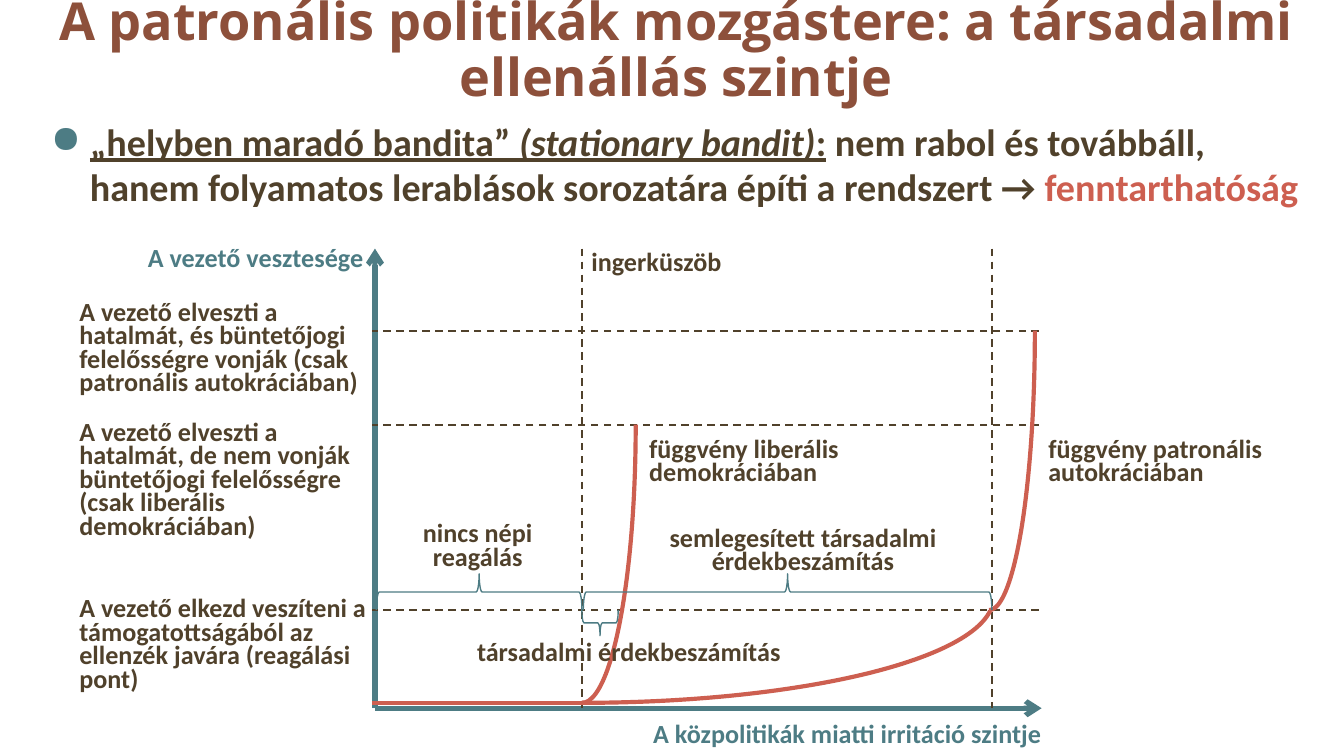
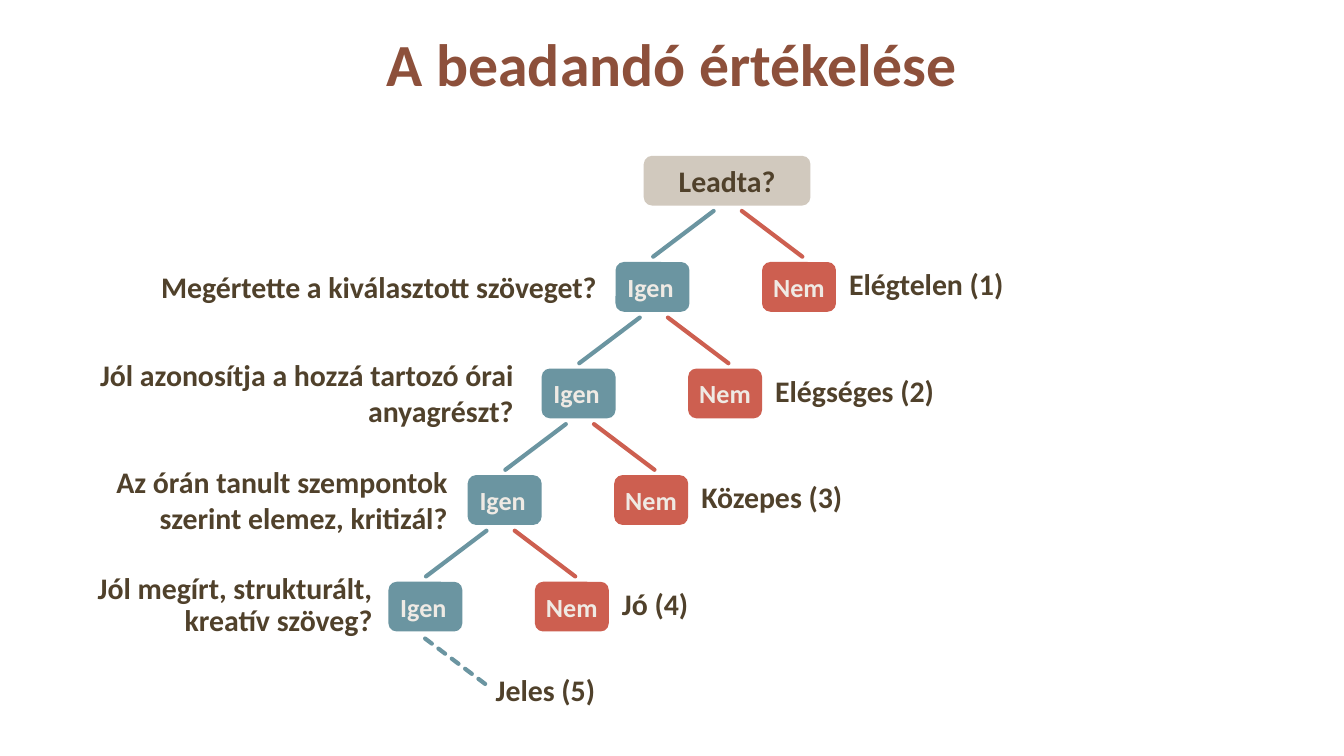
from collections import namedtuple

from lxml.etree import SubElement
from pptx import Presentation
from pptx.dml.color import RGBColor
from pptx.enum.dml import MSO_LINE
from pptx.enum.shapes import MSO_CONNECTOR, MSO_SHAPE
from pptx.enum.text import MSO_ANCHOR, PP_ALIGN
from pptx.oxml.ns import qn
from pptx.util import Inches, Pt

COLS, ROWS = 100, 56.25
BROWN, DARK, TEAL = "8D503B", "50412B", "4D7C84"
BLUE, RED, SAND, PALE = "6B95A1", "CD5F50", "D1C9BE", "EFEAE4"
LEFT, CENTER, RIGHT = PP_ALIGN.LEFT, PP_ALIGN.CENTER, PP_ALIGN.RIGHT
TOP, MIDDLE = MSO_ANCHOR.TOP, MSO_ANCHOR.MIDDLE
PAD = (0.1, 0.05, 0.1, 0.05)

Box = namedtuple("Box", "x y w h")


def grid(n):
    """Length of n grid cells; a cell is a tenth of an inch."""
    return Inches(n / 10)


def rgb(color):
    return RGBColor.from_string(color)


def inside(box, x, y, w=0, h=0):
    return Box(box.x + x, box.y + y, w, h)


def frame(box):
    return [grid(v) for v in box]


def bullet(p, char, color, indent):
    pPr = p._p.get_or_add_pPr()
    pPr.set("marL", str(Inches(indent)))
    pPr.set("indent", str(-Inches(indent)))
    SubElement(SubElement(pPr, qn("a:buClr")), qn("a:srgbClr")).set("val", color)
    SubElement(pPr, qn("a:buChar")).set("char", char)


def write(tf, text, size=14, color=DARK, font="Calibri", align=LEFT, anchor=TOP,
          spacing=None, after=0, pad=PAD, wrap=True, mark=None):
    """Fill a frame; text is a string or a list of (text, font settings)."""
    tf.word_wrap, tf.vertical_anchor = wrap, anchor
    tf.margin_left, tf.margin_top, tf.margin_right, tf.margin_bottom = map(Inches, pad)
    p = tf.paragraphs[0]
    if mark:
        bullet(p, mark, TEAL, 0.29)
    p.alignment, p.space_after = align, Pt(after)
    if spacing:
        p.line_spacing = spacing
    for part, look in [(text, {})] if isinstance(text, str) else text:
        r = p.add_run()
        r.text = part
        r.font.name, r.font.size, r.font.bold = font, Pt(size), True
        r.font.italic = look.get("italic", False)
        r.font.underline = look.get("underline", False)
        r.font.color.rgb = rgb(look.get("color", color))


def add_text(s, box, text, **look):
    write(s.shapes.add_textbox(*frame(box)).text_frame, text, **look)


def add_title(s, box, text, **look):
    add_text(s, box, text, color=BROWN, align=CENTER, anchor=MIDDLE, spacing=0.9, **look)


def add_line(s, box, start, end, color=DARK, width=1, dash=None, arrow=False, cap="flat"):
    (x1, y1), (x2, y2) = start, end
    c = s.shapes.add_connector(MSO_CONNECTOR.STRAIGHT, grid(box.x + x1), grid(box.y + y1),
                               grid(box.x + x2), grid(box.y + y2))
    c.line.color.rgb, c.line.width = rgb(color), Pt(width)
    if dash:
        c.line.dash_style = dash
    spPr = c._element.spPr
    ln = spPr.get_or_add_ln()
    ln.set("cap", cap)
    if arrow:
        SubElement(ln, qn("a:tailEnd")).set("type", "arrow")
    SubElement(spPr, qn("a:effectLst"))


def add_outline(s, kind, box, color, width, turn):
    """Unfilled shape turned a quarter, so that it covers the box."""
    x, y = box.x + (box.w - box.h) / 2, box.y + (box.h - box.w) / 2
    sp = s.shapes.add_shape(kind, *frame((x, y, box.h, box.w)))
    sp.shadow.inherit = False
    sp.fill.background()
    sp.line.color.rgb, sp.line.width = rgb(color), Pt(width)
    sp.rotation = turn
    return sp


def add_curve(s, box, foot, tip, begin=162):
    """Quarter ellipse that rises from foot to tip."""
    rx, ry = tip[0] - foot[0], foot[1] - tip[1]
    area = inside(box, foot[0] - rx, tip[1] - ry, 2 * rx, 2 * ry)
    sp = add_outline(s, MSO_SHAPE.ARC, area, RED, 2.25, 90)
    sp.adjustments[0], sp.adjustments[1] = begin, 0


def add_brace(s, area, turn=90):
    add_outline(s, MSO_SHAPE.LEFT_BRACE, area, TEAL, 0.75, turn)


def add_block(s, box, text, fill, **look):
    sp = s.shapes.add_shape(MSO_SHAPE.ROUNDED_RECTANGLE, *frame(box))
    sp.shadow.inherit = False
    sp.fill.solid()
    sp.fill.fore_color.rgb = rgb(fill)
    sp.line.fill.background()
    write(sp.text_frame, text, anchor=MIDDLE, wrap=False, **look)


def resistance_figure(s, box):
    axis, threshold, breaking, edge = 22, 37.4, 67.9, 71.4
    jail, defeat, reaction, floor, base = 6.1, 13.1, 26.9, 33.8, 34.2

    add_line(s, box, (axis, base), (edge + 0.2, base), TEAL, 2.75, arrow=True)
    add_line(s, box, (axis, base), (axis, 0), TEAL, 2.75, arrow=True)
    for x in (threshold, breaking):
        add_line(s, box, (x, 0), (x, base), dash=MSO_LINE.DASH)
    for y in (jail, defeat, reaction):
        add_line(s, box, (edge, y), (axis - 0.2, y), dash=MSO_LINE.DASH)

    add_line(s, box, (axis - 0.2, floor), (threshold, floor), RED, 2.25)
    add_curve(s, box, (threshold, floor), (threshold + 4, defeat))
    add_curve(s, box, (threshold, floor), (breaking + 0.1, reaction - 0.9), 163.08)
    add_curve(s, box, (breaking - 0.2, reaction), (edge - 0.3, jail))

    for x1, x2 in ((axis, threshold), (threshold, breaking)):
        add_brace(s, inside(box, x1 + 0.1, reaction - 2.7, x2 - x1 - 0.1, 2.7))
    add_brace(s, inside(box, threshold, reaction, 2.7, 1.9), 270)

    axis_look, side = dict(color=TEAL, anchor=MIDDLE), dict(anchor=MIDDLE)
    centered = dict(align=CENTER)
    labels = [
        ((5.1, -0.3, 17.2, 2.4), "A vezető vesztesége", axis_look),
        ((41.3, 35.1, 30.3, 2.4), "A közpolitikák miatti irritáció szintje",
         dict(axis_look, align=RIGHT)),
        ((0, 4.3, 21.5, 6.4), "A vezető elveszti a hatalmát, és büntetőjogi felelősségre "
         "vonják (csak patronális autokráciában)", side),
        ((0, 14.7, 21.5, 5.2), "A vezető elveszti a hatalmát, de nem vonják büntetőjogi "
         "felelősségre (csak liberális demokráciában)", side),
        ((0, 26.8, 21.5, 5.5), "A vezető elkezd veszíteni a támogatottságából az ellenzék "
         "javára (reagálási pont)", side),
        ((38.1, 0, 22.1, 2.4), "ingerküszöb", side),
        ((42.4, 14.2, 17.8, 4.7), "függvény liberális demokráciában", {}),
        ((72.1, 14.2, 17.8, 4.7), "függvény patronális autokráciában", {}),
        ((22.5, 20.5, 14.3, 3.1), "nincs népi reagálás", centered),
        ((29.1, 29.3, 23.6, 3.1), "társadalmi érdekbeszámítás", centered),
        ((41.4, 20.8, 24.9, 3.1), "semlegesített társadalmi érdekbeszámítás", centered),
    ]
    for area, text, look in labels:
        add_text(s, inside(box, *area), text, spacing=0.75, after=10, pad=(0,) * 4, **look)


def resistance_slide(s):
    add_title(s, Box(1.5, -0.5, 97.6, 8.7),
              "A patronális politikák mozgástere: a társadalmi ellenállás szintje",
              size=28, font="Open Sans")
    resistance_figure(s, Box(5.9, 18.5, 91, 37.5))
    add_text(s, Box(2.8, 8.3, 96.1, 8), [
        ("„helyben maradó bandita” ", dict(underline=True)),
        ("(stationary bandit)", dict(underline=True, italic=True)),
        (":", dict(underline=True)),
        (" nem rabol és továbbáll, hanem folyamatos lerablások sorozatára építi a rendszert → ", {}),
        ("fenntarthatóság", dict(color=RED)),
    ], size=20.4, after=3, mark="●")


# left edge of the yes block, question, its width and gap, answer, line spacing
STEPS = [
    (41.8, "Megértette a kiválasztott szöveget?", 34.9, 0.4, "Elégtelen (1)", None),
    (36.3, "Jól azonosítja a hozzá tartozó órai anyagrészt?", 35.2, 1.1, "Elégséges (2)", None),
    (30.8, "Az órán tanult szempontok szerint elemez, kritizál?", 30.7, 0.5, "Közepes (3)", None),
    (24.9, "Jól megírt, strukturált, kreatív szöveg?", 22.8, 0.2, "Jó (4)", 0.9),
]


def grading_tree(s, box):
    bw, bh, step, apart = 5.5, 3.7, 7.93, 10.9
    add_block(s, inside(box, 43.9, 0, 12.4, bh), "Leadta?", SAND, size=16, align=CENTER)
    for i, (x, question, width, gap, answer, spacing) in enumerate(STEPS):
        y = 7.9 + i * step
        no, mid = x + apart, x + 2.8
        add_text(s, inside(box, x - gap - width, y - 1.4, width, 6.4), question,
                 size=16, align=RIGHT, anchor=MIDDLE, spacing=spacing)
        add_block(s, inside(box, x, y, bw, bh), "Igen", BLUE, color=PALE,
                  pad=(0.07, 0.05, 0, 0.05))
        add_block(s, inside(box, no, y, bw, bh), "Nem", RED, color=PALE, align=CENTER)
        add_text(s, inside(box, no + bw, y - 0.2, 14, bh), answer, size=16, wrap=False)
        for end, run, color in ((mid, 4.5, BLUE), (mid + 11.1, -4.5, RED)):
            add_line(s, box, (end, y - 0.4), (end + run, y - 3.8), color, 2.25, cap="rnd")
    add_line(s, box, (mid + 4.4, y + 7.6), (mid - 0.1, y + 4.2), BLUE, 2.25,
             dash=MSO_LINE.SQUARE_DOT, cap="rnd")
    add_text(s, inside(box, x + 7, y + 6.2, 9.5, bh), "Jeles (5)", size=16, wrap=False)


def grading_slide(s):
    add_title(s, Box(1.2, 0, 97.6, 10), "A beadandó értékelése", size=32)
    grading_tree(s, Box(4, 11.6, 72, 42))


def main():
    prs = Presentation()
    prs.slide_width, prs.slide_height = grid(COLS), grid(ROWS)
    for build in (resistance_slide, grading_slide):
        build(prs.slides.add_slide(prs.slide_layouts[6]))
    prs.save("out.pptx")


if __name__ == "__main__":
    main()
